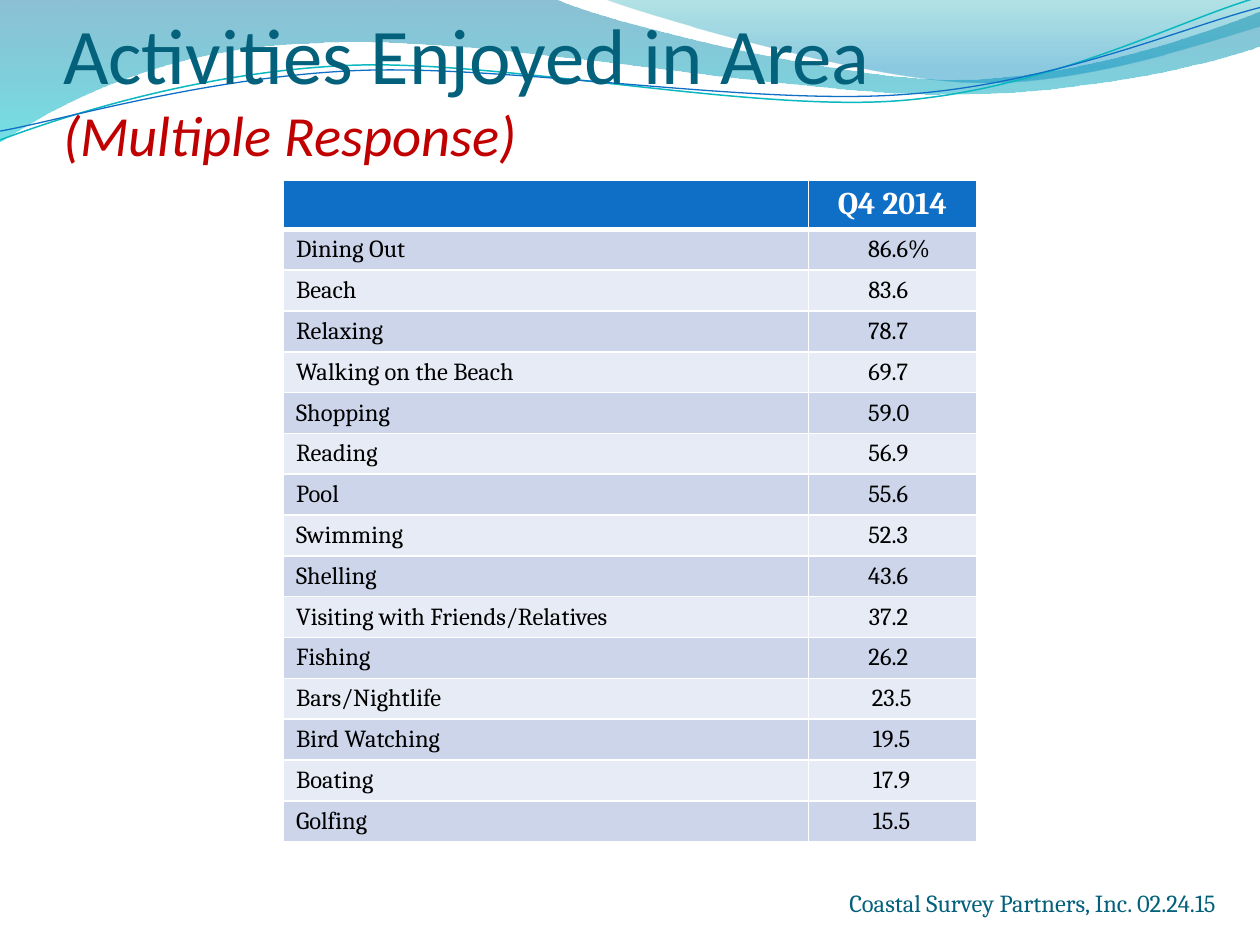
import dataclasses
from typing import NamedTuple

import lxml.etree
import pptx
import pptx.dml.color
import pptx.enum.text
import pptx.oxml.ns
import pptx.util

Pt = pptx.util.Pt
qn = pptx.oxml.ns.qn
Align = pptx.enum.text.PP_ALIGN
Anchor = pptx.enum.text.MSO_ANCHOR


class Box(NamedTuple):
    left: float
    top: float
    width: float
    height: float


@dataclasses.dataclass(frozen=True)
class Theme:
    title_font: str = "Calibri"
    body_font: str = "Cambria"
    teal: str = "04617B"
    red: str = "C00000"
    blue: str = "0F6FC6"
    aqua: str = "0AB8BF"
    white: str = "FFFFFF"
    black: str = "000000"
    bands: tuple = ("CCD5EA", "E7EBF5")
    # Gradient stops: position, colour, opacity (percent)
    back_wave: tuple = ((0, "0074A1", 45), (100, "00C6CF", 55))
    front_wave: tuple = ((0, "00A1A9", 30), (80, "008BBF", 45))
    title_size: float = 45
    subtitle_size: float = 32.4
    header_size: float = 18
    body_size: float = 14


THEME = Theme()

# Wave outlines in points: a pair is a corner, three pairs are a Bezier curve.
BACK_WAVE = [
    (0, 0), (317, -0.7),
    ((343, 12), (478, 45.5), (546, 45.5)),
    ((614, 45.5), (690, 18.7), (720, 6.5)),
    (720.7, 26),
    ((708, 32), (626, 54.7), (537, 54)),
    ((448, 54), (275, 20), (185, 24.5)),
    ((93, 26), (33, 60), (-0.7, 81.4)),
]
FRONT_WAVE = [
    (345, -0.7),
    ((366.5, 8), (491, 44.6), (553.7, 46.8)),
    ((616, 49.7), (692, 23), (720, 15)),
    (720, 0),
]
AQUA_LINE = [
    (0, 80),
    ((34.6, 67), (113.8, 41), (199.4, 37.4)),
    ((284.4, 33.8), (427, 64), (513.4, 57.6)),
    ((599.8, 51), (675.4, 10.8), (718.6, -1.4)),
]
BLUE_LINE = [
    (0, 74.9),
    ((33.8, 69), (118, 44), (203.8, 40.3)),
    ((290, 36.7), (430, 60.5), (516.2, 54)),
    ((602, 48.2), (677.5, 15), (720, 4.3)),
]

ACTIVITIES = [
    ("Dining Out", "86.6%"), ("Beach", "83.6"), ("Relaxing", "78.7"),
    ("Walking on the Beach", "69.7"), ("Shopping", "59.0"), ("Reading", "56.9"),
    ("Pool", "55.6"), ("Swimming", "52.3"), ("Shelling", "43.6"),
    ("Visiting with Friends/Relatives", "37.2"), ("Fishing", "26.2"),
    ("Bars/Nightlife", "23.5"), ("Bird Watching", "19.5"),
    ("Boating", "17.9"), ("Golfing", "15.5"),
]
DECIMAL_ROWS = 11  # later rows are centred on the tab stop


def rgb(value):
    return pptx.dml.color.RGBColor.from_string(value)


def style_font(font, name, size, color, bold=False, italic=False):
    font.name = name
    font.size = Pt(size)
    font.color.rgb = rgb(color)
    font.bold = bold
    font.italic = italic


def add_outline(page, box, outline, closed):
    """Build a freeform on the end points, then bend its segments into curves."""
    ends = [part if len(part) == 2 else part[-1] for part in outline]
    corners = [(Pt(x), Pt(y)) for x, y in ends]
    builder = page.shapes.build_freeform(*corners[0])
    builder.add_line_segments(corners[1:], close=closed)
    shape = builder.convert_to_shape(Pt(box.left), Pt(box.top))
    shape.shadow.inherit = False
    left, top = (min(axis) for axis in zip(*corners))
    segments = list(shape.element.iter(qn("a:lnTo")))
    for segment, part in zip(segments, outline[1:]):
        if len(part) == 3:
            curve = lxml.etree.Element(qn("a:cubicBezTo"))
            for x, y in part:
                lxml.etree.SubElement(curve, qn("a:pt"),
                                      x=str(Pt(x) - left), y=str(Pt(y) - top))
            segment.getparent().replace(segment, curve)
    return shape


def add_wave(page, box, outline, stops):
    """Add a closed wave with a translucent top-to-bottom gradient."""
    shape = add_outline(page, box, outline, True)
    shape.line.fill.background()
    shape.fill.gradient()
    gradient = shape.element.spPr.find(qn("a:gradFill"))
    for child in list(gradient):
        gradient.remove(child)
    stop_list = lxml.etree.SubElement(gradient, qn("a:gsLst"))
    for position, color, opacity in stops:
        stop = lxml.etree.SubElement(stop_list, qn("a:gs"), pos=str(position * 1000))
        tint = lxml.etree.SubElement(stop, qn("a:srgbClr"), val=color)
        lxml.etree.SubElement(tint, qn("a:alpha"), val=str(opacity * 1000))
    lxml.etree.SubElement(gradient, qn("a:lin"), ang="5400000", scaled="0")


def add_wave_line(page, box, outline, color, width):
    shape = add_outline(page, box, outline, False)
    shape.fill.background()
    shape.line.color.rgb = rgb(color)
    shape.line.width = Pt(width)


def add_banner(page, box):
    add_wave(page, box, BACK_WAVE, THEME.back_wave)
    add_wave(page, box, FRONT_WAVE, THEME.front_wave)
    add_wave_line(page, box, AQUA_LINE, THEME.aqua, 0.85)
    add_wave_line(page, box, BLUE_LINE, THEME.blue, 0.75)


def place_title(page, box):
    title = page.shapes.title
    page.shapes.element.append(title.element)  # in front of the banner
    title.left, title.top, title.width, title.height = map(Pt, box)
    frame = title.text_frame
    frame.auto_size = pptx.enum.text.MSO_AUTO_SIZE.NONE
    frame.word_wrap = True
    frame.vertical_anchor = Anchor.BOTTOM
    frame.margin_left = frame.margin_right = frame.margin_bottom = 0
    para = frame.paragraphs[0]
    para.alignment = Align.LEFT
    span = para.add_run()
    span.text = "Activities Enjoyed in Area"
    style_font(span.font, THEME.title_font, THEME.title_size, THEME.teal)
    para.add_line_break()
    span = para.add_run()
    span.text = "(Multiple Response)"
    style_font(span.font, THEME.title_font, THEME.subtitle_size, THEME.red, italic=True)


def fill_cell(cell, text, fill, size, color, bold=False, align=Align.LEFT, tab=None):
    cell.fill.solid()
    cell.fill.fore_color.rgb = rgb(fill)
    para = cell.text_frame.paragraphs[0]
    para.alignment = align
    if tab:
        tabs = lxml.etree.SubElement(para._p.get_or_add_pPr(), qn("a:tabLst"))
        lxml.etree.SubElement(tabs, qn("a:tab"), pos=str(Pt(40.32)), algn=tab)
    para.text = text
    style_font(para.font, THEME.body_font, size, color, bold)


def add_bottom_rule(cell, width):
    rule = lxml.etree.Element(qn("a:lnB"), w=str(Pt(width)))
    paint = lxml.etree.SubElement(rule, qn("a:solidFill"))
    lxml.etree.SubElement(paint, qn("a:srgbClr"), val=THEME.white)
    cell._tc.get_or_add_tcPr().insert(0, rule)


def add_activity_table(page, box, header_height=28, label_width=300):
    table = page.shapes.add_table(len(ACTIVITIES) + 1, 2, *map(Pt, box)).table
    table.columns[0].width = Pt(label_width)
    table.columns[1].width = Pt(box.width - label_width)
    row_height = (box.height - header_height) / len(ACTIVITIES)
    for index, row in enumerate(table.rows):
        row.height = Pt(row_height if index else header_height)
    for column, text in enumerate(("", "Q4 2014")):
        cell = table.cell(0, column)
        fill_cell(cell, text, THEME.blue, THEME.header_size,
                  THEME.white, bold=True, align=Align.CENTER)
        add_bottom_rule(cell, 3)
    for index, (activity, share) in enumerate(ACTIVITIES):
        tab = "dec" if index < DECIMAL_ROWS else "ctr"
        for column, (text, stop) in enumerate(((activity, None), ("\t" + share, tab))):
            cell = table.cell(index + 1, column)
            cell.vertical_anchor = Anchor.MIDDLE
            fill_cell(cell, text, THEME.bands[index % 2], THEME.body_size,
                      THEME.black, tab=stop)


def add_footer(page, box):
    frame = page.shapes.add_textbox(*map(Pt, box)).text_frame
    frame.word_wrap = True
    para = frame.paragraphs[0]
    para.text = "Coastal Survey Partners, Inc. 02.24.15"
    para.alignment = Align.RIGHT
    style_font(para.font, THEME.body_font, THEME.body_size, THEME.teal)


def main():
    deck = pptx.Presentation()
    deck.slide_width, deck.slide_height = Pt(720), Pt(540)
    page = deck.slides.add_slide(deck.slide_layouts[5])
    add_banner(page, Box(0, 0, 720, 82))
    add_footer(page, Box(456, 504, 246, 24.5))
    place_title(page, Box(36, 6, 648, 90))
    add_activity_table(page, Box(162, 103, 396, 378))
    deck.save("out.pptx")


if __name__ == "__main__":
    main()
